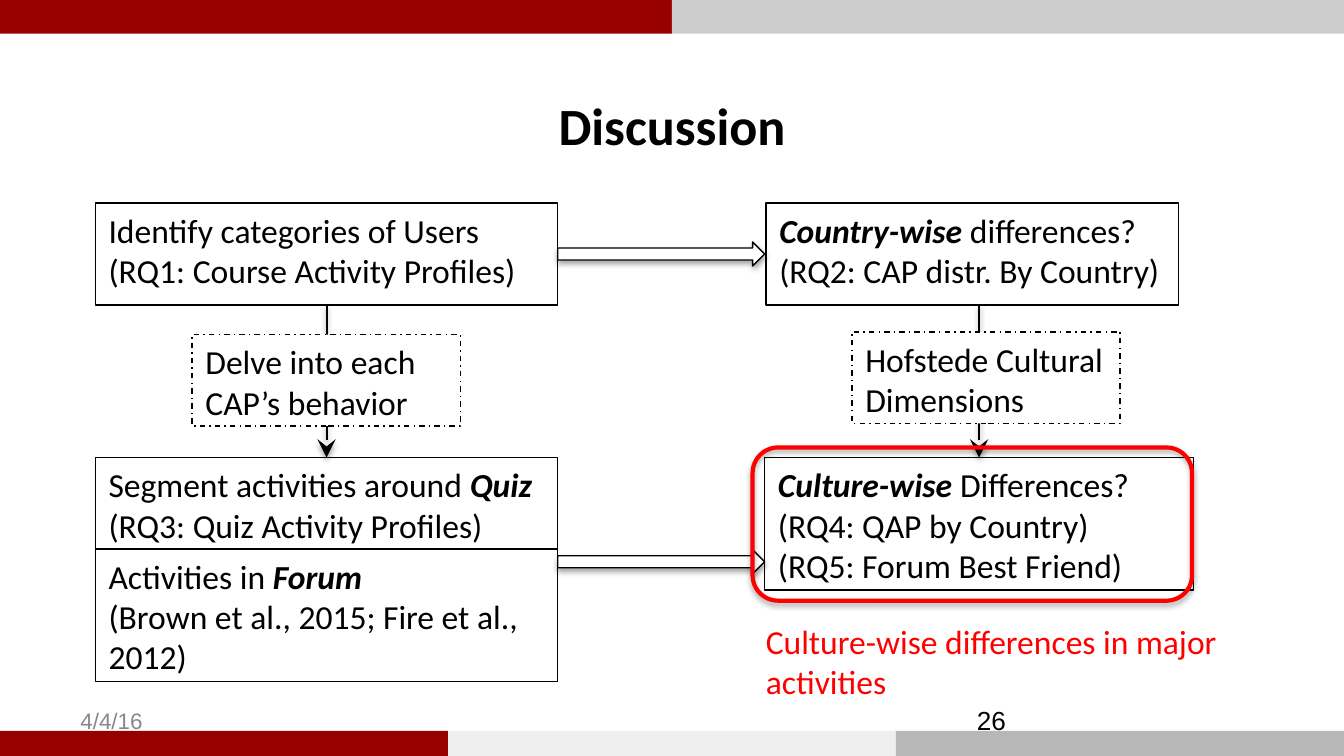
import pptx
import pptx.dml.color
import pptx.enum.dml
import pptx.enum.shapes
import pptx.enum.text
import pptx.oxml
import pptx.oxml.ns
import pptx.util

SHAPE = pptx.enum.shapes.MSO_SHAPE
ALIGN = pptx.enum.text.PP_ALIGN
ANCHOR = pptx.enum.text.MSO_ANCHOR
DASH = pptx.enum.dml.MSO_LINE.DASH_DOT

# The slide is a grid of square cells, 0.1 inch each
CELL = pptx.util.Inches(0.1)
COLS, ROWS = 100, 56.25
LEFT, LEFT_W = 7.1, 34.4
RIGHT = 57
TOP, TOP_H = 15.1, 7.6
LOWER = 34.05
TWO_LINES, THREE_LINES = 6.8, 9.85
NOTE_W = 19.95
ARROW_H = 1.8

COLORS = {
    "crimson": "990000", "dark red": "980000", "silver": "CCCCCC",
    "pale": "EFEFEF", "gray": "B7B7B7", "date": "888888",
    "black": "000000", "white": "FFFFFF", "red": "FF0000",
}


def grid(*cells):
    return [round(c * CELL) for c in cells]


def rgb(name):
    return pptx.dml.color.RGBColor.from_string(COLORS[name])


def write(s, text, size=18, font="Calibri", color="black", bold=False,
          align=ALIGN.LEFT, anchor=ANCHOR.TOP):
    """Fill a shape with lines of text; parts between asterisks are bold italic."""
    tf = s.text_frame
    tf.word_wrap = True
    tf.vertical_anchor = anchor
    for i, line in enumerate(text.split("\n")):
        p = tf.add_paragraph() if i else tf.paragraphs[0]
        p.alignment = align
        for j, part in enumerate(line.split("*")):
            if not part:
                continue
            r = p.add_run()
            r.text = part
            r.font.name = font
            r.font.size = pptx.util.Pt(size)
            r.font.bold = bold or j % 2 == 1
            r.font.italic = j % 2 == 1
            r.font.color.rgb = rgb(color)


def add_shadow(s, alpha=35, distance=1.8):
    effects = s._element.spPr.find(pptx.oxml.ns.qn("a:effectLst"))
    effects.append(pptx.oxml.parse_xml(
        f'<a:outerShdw {pptx.oxml.ns.nsdecls("a")} blurRad="{pptx.util.Pt(3.1)}" '
        f'dist="{pptx.util.Pt(distance)}" dir="5400000" rotWithShape="0">'
        f'<a:srgbClr val="{COLORS["black"]}"><a:alpha val="{alpha * 1000}"/>'
        '</a:srgbClr></a:outerShdw>'))


def add_shape(slide, kind, cells, fill=None, line=None, width=0.75, dash=None):
    s = slide.shapes.add_shape(kind, *grid(*cells))
    s.shadow.inherit = False
    if fill:
        s.fill.solid()
        s.fill.fore_color.rgb = rgb(fill)
    else:
        s.fill.background()
    if line:
        s.line.color.rgb = rgb(line)
        s.line.width = pptx.util.Pt(width)
        s.line.dash_style = dash
    else:
        s.line.fill.background()
    return s


def add_band(slide, top, height, *colors):
    width = COLS / len(colors)
    for i, color in enumerate(colors):
        add_shape(slide, SHAPE.RECTANGLE, (i * width, top, width, height), fill=color)


def add_box(slide, cells, text, **look):
    s = add_shape(slide, SHAPE.RECTANGLE, cells, line="black", **look)
    write(s, text)
    return s


def add_label(slide, cells, text, **style):
    write(slide.shapes.add_textbox(*grid(*cells)), text, **style)


def add_block_arrow(slide, middle):
    start = LEFT + LEFT_W
    s = add_shape(slide, SHAPE.RIGHT_ARROW,
                  (start, middle - ARROW_H / 2, RIGHT - 0.1 - start, ARROW_H),
                  fill="white", line="black")
    add_shadow(s)


def add_down_arrow(slide, x, top, target, source=None):
    """Lead down to the top of target, joined to source when it is centred on x."""
    c = slide.shapes.add_connector(pptx.enum.shapes.MSO_CONNECTOR.STRAIGHT,
                                   *grid(x, top, x, LOWER))
    if source:
        c.begin_connect(source, 2)
    c.end_connect(target, 0)
    c.line.color.rgb = rgb("black")
    c.line.width = pptx.util.Pt(1)
    ns = pptx.oxml.ns.nsdecls("a")
    c.line._get_or_add_ln().append(
        pptx.oxml.parse_xml(f'<a:tailEnd {ns} type="stealth" w="lg" len="lg"/>'))
    c._element.spPr.append(pptx.oxml.parse_xml(f"<a:effectLst {ns}/>"))
    add_shadow(c, alpha=38, distance=1.6)


def main():
    prs = pptx.Presentation()
    prs.slide_width, prs.slide_height = grid(COLS, ROWS)
    slide = prs.slides.add_slide(prs.slide_layouts[5])

    add_band(slide, 0, 2.5, "crimson", "silver")
    add_band(slide, ROWS - 1.87, 1.87, "dark red", "pale", "gray")

    title = slide.shapes.title
    title.left, title.top, title.width, title.height = grid(5, 4.9, COLS - 10, 8.8)
    write(title, "Discussion", size=28, bold=True, align=ALIGN.CENTER,
          anchor=ANCHOR.MIDDLE)

    users = add_box(slide, (LEFT, TOP, LEFT_W, TOP_H),
                    "Identify categories of Users\n(RQ1: Course Activity Profiles)")
    add_box(slide, (RIGHT, TOP, 30.7, TOP_H),
            "*Country-wise *differences? (RQ2: CAP distr. By Country)")
    quiz = add_box(slide, (LEFT, LOWER, LEFT_W, TWO_LINES),
                   "Segment activities around *Quiz*\n(RQ3: Quiz Activity Profiles)")
    culture = add_box(slide, (RIGHT - 0.1, LOWER, 31.9, THREE_LINES),
                      "*Culture-wise *Differences?\n(RQ4: QAP by Country)\n"
                      "(RQ5: Forum Best Friend)")
    add_box(slide, (LEFT, LOWER + TWO_LINES, LEFT_W, THREE_LINES),
            "Activities in *Forum*\n(Brown et al., 2015; Fire et al., 2012)")

    add_block_arrow(slide, TOP + TOP_H / 2)
    add_block_arrow(slide, 41.8)

    add_down_arrow(slide, LEFT + LEFT_W / 2, TOP + TOP_H, quiz, source=users)
    add_box(slide, (14.3, 24.9, NOTE_W, TWO_LINES),
            "Delve into each CAP’s behavior", fill="white", dash=DASH)
    add_down_arrow(slide, RIGHT - 0.1 + 31.9 / 2, TOP + TOP_H, culture)
    add_box(slide, (63.4, 24.7, NOTE_W, TWO_LINES),
            "Hofstede Cultural Dimensions", fill="white", dash=DASH)

    add_label(slide, (56, 45.7, 42.6, 5.3),
              "Culture-wise differences in major activities", color="red")
    highlight = add_shape(slide, SHAPE.ROUNDED_RECTANGLE, (56, 33.3, 32.7, 11.4),
                          line="red", width=2.25)
    add_shadow(highlight)

    add_label(slide, (5, 52.1, 23.3, 3), "4/4/16", size=12, font="Arial",
              color="date", anchor=ANCHOR.MIDDLE)
    add_label(slide, (71.7, 52.1, 23.3, 3), "26", size=14, font="Arial",
              anchor=ANCHOR.MIDDLE)
    prs.save("out.pptx")


if __name__ == "__main__":
    main()
